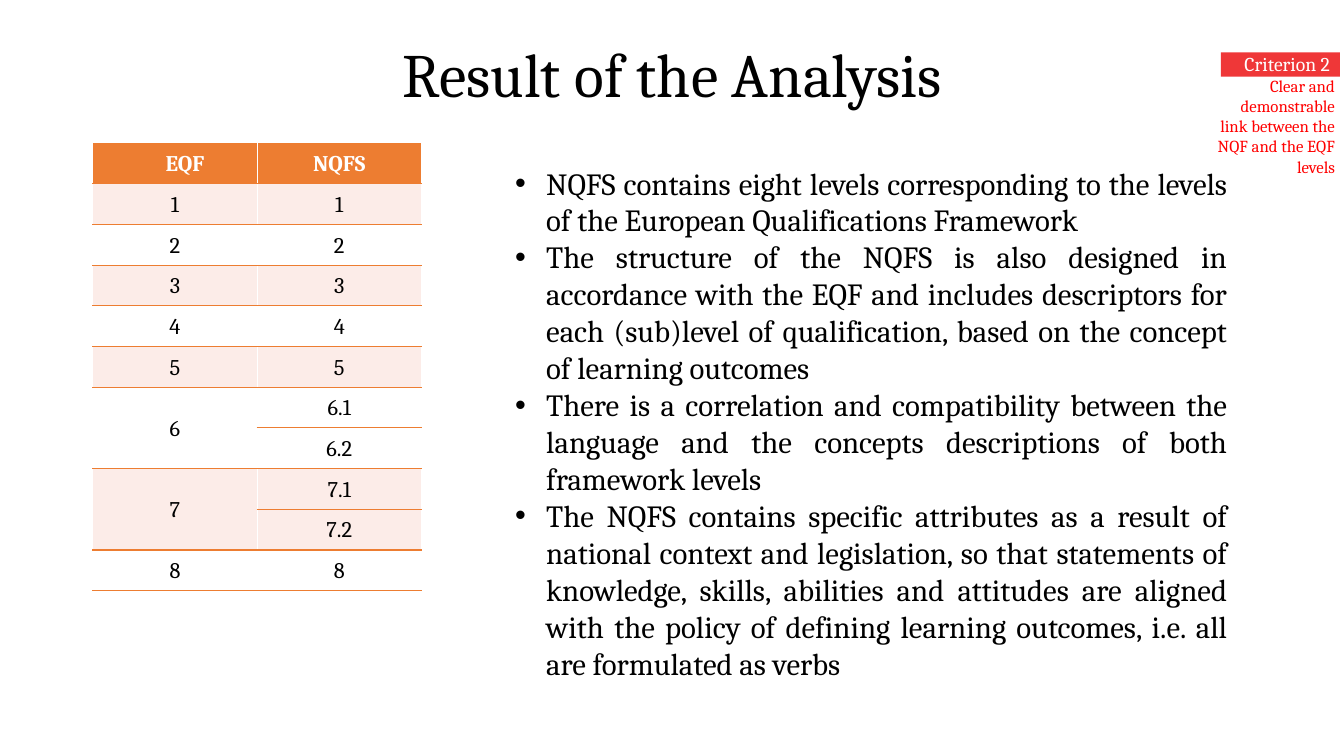
from lxml import etree
from pptx import Presentation
from pptx import util as u
from pptx.dml.color import RGBColor
from pptx.enum import shapes, text
from pptx.oxml.ns import qn

PX = 9144
FONT = "Cambria"
ORANGE, PINK, WHITE, BLACK, RED = "ED7D31", "FCECE8", "FFFFFF", "000000", "FF0000"
AL, MID = text.PP_ALIGN, text.MSO_ANCHOR.MIDDLE
LEVELS = [("EQF", "NQFS")] + [(str(n), str(n)) for n in range(1, 6)] + [
    ("6", "6.1"), ("", "6.2"), ("7", "7.1"), ("", "7.2"), ("8", "8")]
POINTS = [
    "NQFS contains eight levels corresponding to the levels of the European "
    "Qualifications Framework",
    "The structure of the NQFS is also designed in accordance with the EQF and includes "
    "descriptors for each (sub)level of qualification, based on the concept of learning outcomes",
    "There is a correlation and compatibility between the language and the concepts "
    "descriptions of both framework levels",
    "The NQFS contains specific attributes as a result of national context and legislation, "
    "so that statements of knowledge, skills, abilities and attitudes are aligned with the "
    "policy of defining learning outcomes, i.e. all are formulated as verbs",
]


def px(*vals):
    """Turn px lengths into EMU."""
    return [u.Emu(v * PX) for v in vals]


def tint(hue):
    """Turn a hex string into a colour."""
    return RGBColor.from_string(hue)


def put(item, **vals):
    """Set attributes of an item from a dict of values."""
    for key, val in vals.items():
        setattr(item, key, val)


def pad(item, *vals):
    """Set left, top, right and bottom margins in px."""
    sides = ("left", "top", "right", "bottom")
    put(item, **{f"margin_{s}": v for s, v in zip(sides, px(*vals))})


def write(par, words, size, hue, align, bold=False, space=None):
    """Fill one paragraph with styled words."""
    run = par.add_run()
    run.text = words
    put(par, alignment=align, line_spacing=space)
    put(run.font, name=FONT, size=u.Pt(size), bold=bold)
    run.font.color.rgb = tint(hue)


def frame(slide, box, margins=(10, 5, 10, 5), anchor=text.MSO_ANCHOR.TOP):
    """Add a wrapping text box and return its text frame."""
    body = slide.shapes.add_textbox(*px(*box)).text_frame
    put(body, word_wrap=True, vertical_anchor=anchor)
    pad(body, *margins)
    return body


def title(slide, box):
    """Place the centred slide title."""
    body = frame(slide, box, anchor=MID)
    write(body.paragraphs[0], "Result of the Analysis", 44, BLACK, AL.CENTER, space=0.9)


def label(slide, box):
    """Place the criterion tag with its note below."""
    left, top, wide, high = box
    tag = slide.shapes.add_shape(shapes.MSO_SHAPE.RECTANGLE, *px(left + 15, top, wide - 14, 24))
    tag.shadow.inherit = False
    tag.fill.solid()
    tag.fill.fore_color.rgb = tint("EF3738")
    tag.line.fill.background()
    body = tag.text_frame
    put(body, word_wrap=True, vertical_anchor=text.MSO_ANCHOR.TOP)
    pad(body, 10, 0, 10, 0)
    write(body.paragraphs[0], "Criterion 2", 14, WHITE, AL.RIGHT)
    note = frame(slide, (left, top + 23, wide, high - 23), (10, 0, 4, 0))
    write(note.paragraphs[0], "Clear and demonstrable link between the NQF and the EQF levels",
          12, RED, AL.RIGHT)


def edge(cell):
    """Draw white upright and orange level borders on a cell."""
    props = cell._tc.get_or_add_tcPr()
    for side, hue in zip("LRTB", (WHITE, WHITE, ORANGE, ORANGE)):
        line = etree.SubElement(props, qn(f"a:ln{side}"), w=str(u.Pt(1)))
        fill = etree.SubElement(line, qn("a:solidFill"))
        etree.SubElement(fill, qn("a:srgbClr"), val=hue)


def grid(slide, box):
    """Place the table that pairs the levels."""
    table = slide.shapes.add_table(len(LEVELS), 2, *px(*box)).table
    table.horz_banding = False
    for top in (6, 8):
        table.cell(top, 0).merge(table.cell(top + 1, 0))
    for row, pair in enumerate(LEVELS):
        head = row == 0
        shade = ORANGE if head else PINK if row in (1, 3, 5, 8, 9) else WHITE
        for col, words in enumerate(pair):
            cell = table.cell(row, col)
            if cell.is_spanned:
                continue
            edge(cell)
            cell.fill.solid()
            cell.fill.fore_color.rgb = tint(shade)
            cell.vertical_anchor = MID
            pad(cell, 7, 0, 7, 0)
            write(cell.text_frame.paragraphs[0], words, 16, WHITE if head else BLACK,
                  AL.CENTER, head, 1.07)
    first = table.cell(0, 0).text_frame.paragraphs[0]
    first._p.get_or_add_pPr().set("marL", str(20 * PX))


def points(slide, box):
    """Place the justified bullet list."""
    body = frame(slide, box)
    for num, words in enumerate(POINTS):
        par = body.add_paragraph() if num else body.paragraphs[0]
        props = par._p.get_or_add_pPr()
        props.set("marL", str(31 * PX))
        props.set("indent", str(-31 * PX))
        etree.SubElement(props, qn("a:buFont"), typeface="Arial")
        etree.SubElement(props, qn("a:buChar"), char="•")
        write(par, words, 22, BLACK, AL.JUSTIFY)


def main():
    """Build and save the slide."""
    deck = Presentation()
    wide, high = px(1333, 750)
    put(deck, slide_width=wide, slide_height=high)
    slide = deck.slides.add_slide(deck.slide_layouts[6])
    label(slide, (1196, 52, 132, 124))
    title(slide, (92, 40, 1150, 73))
    grid(slide, (92, 142, 326, 444))
    points(slide, (501, 158, 726, 528))
    deck.save("out.pptx")


if __name__ == "__main__":
    main()
